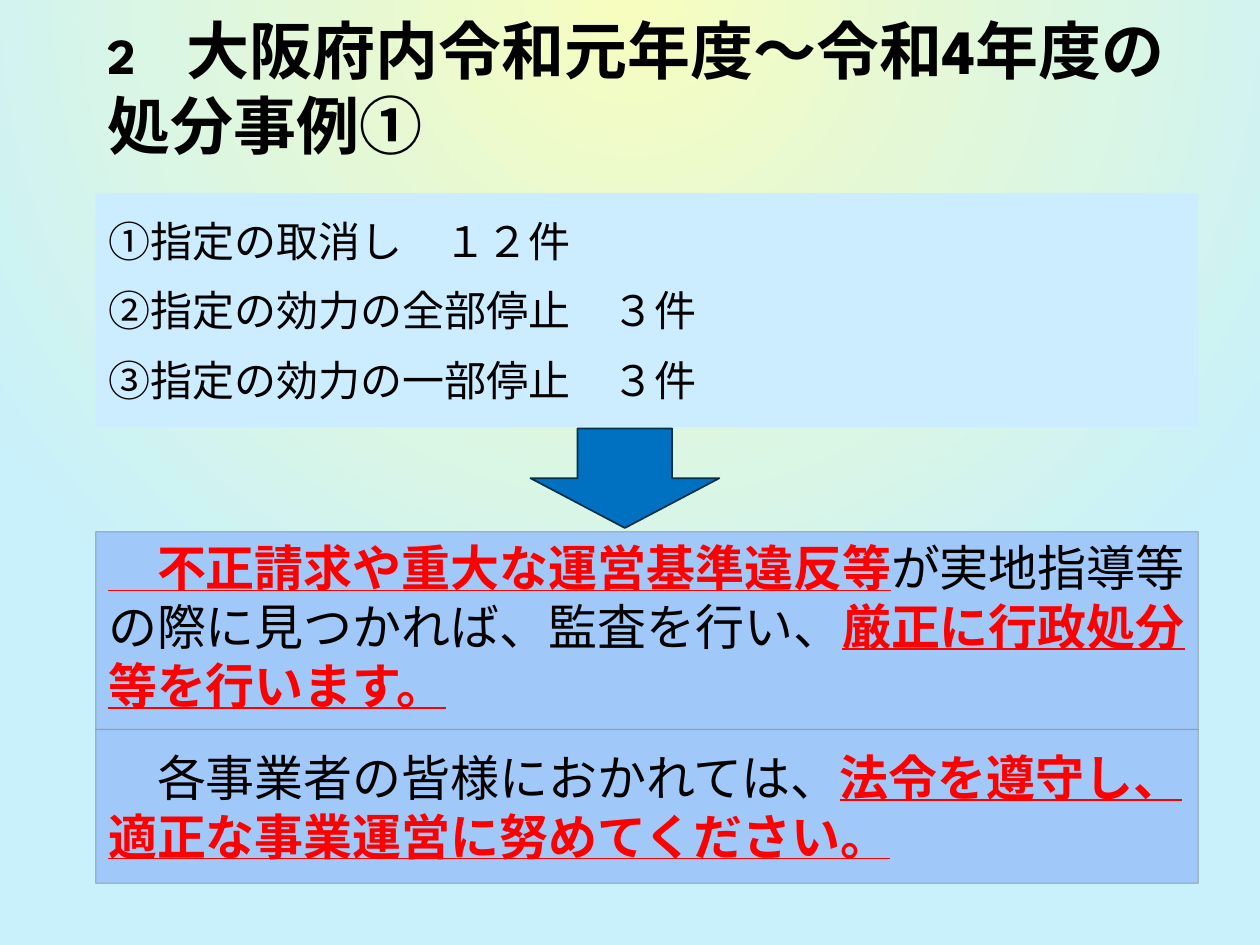
from pptx import Presentation
from pptx.dml.color import RGBColor
from pptx.enum.lang import MSO_LANGUAGE_ID
from pptx.enum.shapes import MSO_SHAPE
from pptx.enum.text import MSO_ANCHOR, MSO_AUTO_SIZE, PP_ALIGN
from pptx.oxml.ns import qn
from pptx.util import Inches, Pt
from lxml.etree import SubElement

FONT = "League Spartan"
RED = "FF0000"
LEFT, WIDTH = 0.76, 8.75


def rgb(value):
    return RGBColor.from_string(value)


def set_background(s, inner, outer):
    fill = s.background.fill
    fill.gradient()
    for stop, color, position in zip(fill.gradient_stops, (inner, outer), (0, 1)):
        stop.color.rgb = rgb(color)
        stop.position = position
    grad = next(s.element.iter(qn("a:gradFill")))
    for lin in grad.findall(qn("a:lin")):
        grad.remove(lin)
    circle = SubElement(grad, qn("a:path"), path="circle")
    SubElement(circle, qn("a:fillToRect"), b="100000")


def add_text(p, text, size=28, color="000000", bold=False, underline=False):
    r = p.add_run()
    r.text = text
    font = r.font
    font.name, font.size = FONT, Pt(size)
    font.bold, font.underline = bold, underline
    font.color.rgb = rgb(color)
    font.language_id = MSO_LANGUAGE_ID.JAPANESE
    latin = r._r.rPr.find(qn("a:latin"))
    ea = SubElement(r._r.rPr, qn("a:ea"), typeface=FONT)
    latin.addnext(ea)


def set_frame(sp, anchor=MSO_ANCHOR.MIDDLE):
    tf = sp.text_frame
    tf.word_wrap = True
    tf.auto_size = MSO_AUTO_SIZE.NONE
    tf.vertical_anchor = anchor
    return tf


def place(sp, left, top, width, height):
    sp.left, sp.top = Inches(left), Inches(top)
    sp.width, sp.height = Inches(width), Inches(height)


def set_title(s, runs):
    sp = s.shapes.title
    place(sp, 0.75, 0.08, WIDTH, 1.22)
    p = set_frame(sp).paragraphs[0]
    p.alignment = PP_ALIGN.LEFT
    for text, size in runs:
        add_text(p, text, size=size, bold=True)


def set_list(s, items):
    sp = s.placeholders[1]
    place(sp, LEFT, 1.53, WIDTH, 1.86)
    sp.fill.solid()
    sp.fill.fore_color.rgb = rgb("CCECFF")
    tf = set_frame(sp)
    for i, item in enumerate(items):
        p = tf.add_paragraph() if i else tf.paragraphs[0]
        p.space_after = Pt(6)
        pPr = p._p.get_or_add_pPr()
        pPr.set("marL", "0")
        pPr.set("indent", "0")
        SubElement(pPr, qn("a:buNone"))
        add_text(p, item, size=24)


def add_shape(s, kind, box, fill, line, weight):
    sp = s.shapes.add_shape(kind, *map(Inches, box))
    sp.shadow.inherit = False
    sp.fill.solid()
    sp.fill.fore_color.rgb = rgb(fill)
    sp.line.color.rgb = rgb(line)
    sp.line.width = Pt(weight)
    return sp


def add_message(s, top, height, anchor, runs):
    box = (LEFT, top, WIDTH, height)
    sp = add_shape(s, MSO_SHAPE.RECTANGLE, box, "A0C9FA", "89919C", 0.75)
    line_color = next(sp.line._ln.iter(qn("a:srgbClr")))
    SubElement(line_color, qn("a:alpha"), val="60000")
    p = set_frame(sp, anchor).paragraphs[0]
    p.alignment = PP_ALIGN.LEFT
    p.space_before = p.space_after = Pt(6)
    for text, strong in runs:
        add_text(p, text, color=RED if strong else "000000",
                 bold=strong, underline=strong)


def main():
    prs = Presentation()
    prs.slide_width, prs.slide_height = Inches(10), Inches(7.5)
    s = prs.slides.add_slide(prs.slide_layouts[1])
    set_background(s, "F7FDBF", "C8F1FB")
    set_title(s, [("2　", 28.8), ("大阪府内令和元年度～令和4年度の処分事例①", 36)])
    set_list(s, ["①指定の取消し　１２件",
                 "②指定の効力の全部停止　３件",
                 "③指定の効力の一部停止　３件"])
    add_message(s, 4.22, 1.57, MSO_ANCHOR.TOP, [
        ("　不正請求や重大な運営基準違反等", True),
        ("が実地指導等の際に見つかれば、監査を行い、", False),
        ("厳正に行政処分等を行います。", True)])
    add_message(s, 5.79, 1.22, MSO_ANCHOR.MIDDLE, [
        ("　各事業者の皆様におかれては、", False),
        ("法令を遵守し、適正な事業運営に努めてください。", True)])
    add_shape(s, MSO_SHAPE.DOWN_ARROW, (4.21, 3.4, 1.5, 0.79), "0070C0", "043148", 1)
    prs.save("out.pptx")


if __name__ == "__main__":
    main()
